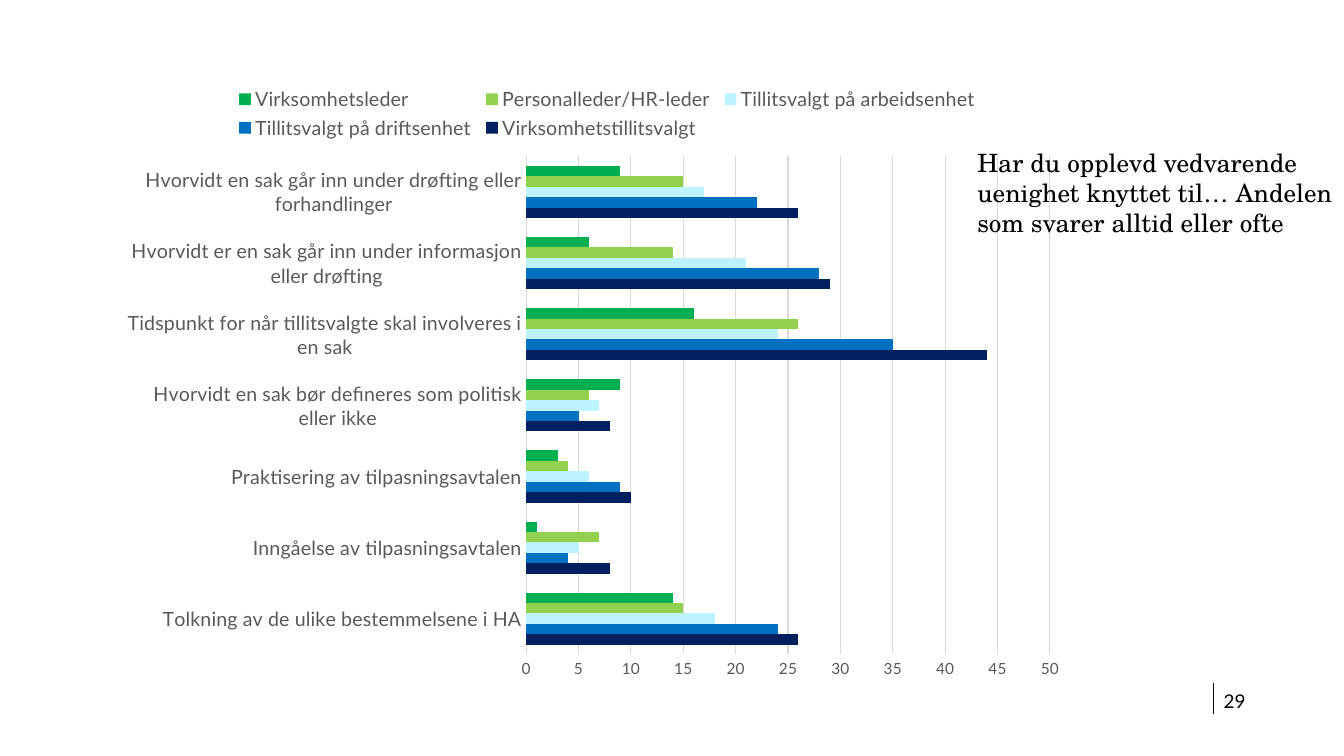
import pptx
import pptx.chart.data
import pptx.dml.color
import pptx.enum.chart
import pptx.enum.shapes
import pptx.enum.text
import pptx.oxml
import pptx.oxml.ns
import pptx.util

Cm = pptx.util.Cm
Pt = pptx.util.Pt

COLORS = {
    "text": "000000",
    "label": "595959",
    "grid": "D9D9D9",
    "navy": "002060",
    "blue": "0070C0",
    "pale": "BDF3FF",
    "lime": "92D050",
    "green": "00B050",
}

TOPICS = [
    "Tolkning av de ulike bestemmelsene i HA",
    "Inngåelse av tilpasningsavtalen",
    "Praktisering av tilpasningsavtalen",
    "Hvorvidt en sak bør defineres som politisk eller ikke",
    "Tidspunkt for når tillitsvalgte skal involveres i en sak",
    "Hvorvidt er en sak går inn under informasjon eller drøfting",
    "Hvorvidt en sak går inn under drøfting eller forhandlinger",
]

ROLES = [
    ("Virksomhetstillitsvalgt", "navy", (26, 8, 10, 8, 44, 29, 26)),
    ("Tillitsvalgt på driftsenhet", "blue", (24, 4, 9, 5, 35, 28, 22)),
    ("Tillitsvalgt på arbeidsenhet", "pale", (18, 5, 6, 7, 24, 21, 17)),
    ("Personalleder/HR-leder", "lime", (15, 7, 4, 6, 26, 14, 15)),
    ("Virksomhetsleder", "green", (14, 1, 3, 9, 16, 6, 9)),
]


def rgb(name):
    return pptx.dml.color.RGBColor.from_string(COLORS[name])


def set_attributes(target, values):
    for name, value in values.items():
        setattr(target, name, value)


def style_font(font, size, color, name="Lato"):
    set_attributes(font, {"size": Pt(size), "name": name})
    font.color.rgb = rgb(color)


def style_line(line, color):
    line.color.rgb = rgb(color)
    line.width = Pt(0.75)


def add_text(slide, box, text, size, font_name, frame_format):
    shape = slide.shapes.add_textbox(*map(Cm, box))
    set_attributes(shape.text_frame, {"word_wrap": True, **frame_format})
    paragraph = shape.text_frame.paragraphs[0]
    run = paragraph.add_run()
    run.text = text
    style_font(run.font, size, "text", font_name)


def add_rule(slide, x, top, bottom):
    connector = slide.shapes.add_connector(
        pptx.enum.shapes.MSO_CONNECTOR.STRAIGHT, Cm(x), Cm(top), Cm(x), Cm(bottom))
    style_line(connector.line, "text")
    properties = connector._element.spPr
    properties.append(properties.makeelement(pptx.oxml.ns.qn("a:effectLst"), {}))


def make_layout(x, y, w, h, inner=False):
    """Fixed placement, as fractions of the chart area."""
    entries = [("layoutTarget", "inner")] if inner else []
    entries += [("xMode", "edge"), ("yMode", "edge"),
                ("x", x), ("y", y), ("w", w), ("h", h)]
    body = "".join(f'<c:{tag} val="{value}"/>' for tag, value in entries)
    return pptx.oxml.parse_xml(
        f'<c:layout {pptx.oxml.ns.nsdecls("c")}>'
        f"<c:manualLayout>{body}</c:manualLayout></c:layout>")


def place(parent, layout, index):
    for old_layout in parent.findall(pptx.oxml.ns.qn("c:layout")):
        parent.remove(old_layout)
    parent.insert(index, layout)


def style_axes(chart):
    none = pptx.enum.chart.XL_TICK_MARK.NONE
    for axis, size in ((chart.category_axis, 14), (chart.value_axis, 11)):
        set_attributes(axis, {"major_tick_mark": none, "minor_tick_mark": none})
        style_font(axis.tick_labels.font, size, "label")
    style_line(chart.category_axis.format.line, "grid")

    value_axis = chart.value_axis
    set_attributes(value_axis, {"minimum_scale": 0, "maximum_scale": 50,
                                "major_unit": 5, "has_major_gridlines": True})
    set_attributes(value_axis.tick_labels,
                   {"number_format": "###0", "number_format_is_linked": False})
    style_line(value_axis.major_gridlines.format.line, "grid")
    value_axis.format.line.fill.background()


def add_bar_chart(slide, box):
    data = pptx.chart.data.CategoryChartData()
    data.categories = TOPICS
    for name, _, values in ROLES:
        data.add_series(name, values)
    chart = slide.shapes.add_chart(
        pptx.enum.chart.XL_CHART_TYPE.BAR_CLUSTERED, *map(Cm, box), data).chart
    set_attributes(chart, {"has_title": False, "has_legend": True})
    style_font(chart.font, 11, "text")

    # Bars
    plot = chart.plots[0]
    set_attributes(plot, {"gap_width": 182, "overlap": 0, "vary_by_categories": False})
    for series, (_, color, _) in zip(plot.series, ROLES):
        series.format.fill.solid()
        series.format.fill.fore_color.rgb = rgb(color)
    style_axes(chart)

    # Legend in two rows above the plot
    set_attributes(chart.legend, {
        "position": pptx.enum.chart.XL_LEGEND_POSITION.TOP,
        "include_in_layout": False,
    })
    style_font(chart.legend.font, 14, "label")
    place(chart.legend._element, make_layout(0.11, 0.01, 0.79, 0.1), 1)
    plot_area = chart._chartSpace.chart.plotArea
    place(plot_area, make_layout(0.42, 0.13, 0.55, 0.81, inner=True), 0)


def main():
    presentation = pptx.Presentation()
    set_attributes(presentation, {"slide_width": Cm(33.87), "slide_height": Cm(19.05)})
    slide = presentation.slides.add_slide(presentation.slide_layouts[6])

    # Page number with its rule
    add_rule(slide, 30.58, 17.2, 17.98)
    margins = dict.fromkeys(
        ("margin_left", "margin_top", "margin_right", "margin_bottom"), 0)
    add_text(slide, (30.84, 17.42, 3.43, 0.48), "29", 13.5, "Lato",
             {"vertical_anchor": pptx.enum.text.MSO_ANCHOR.MIDDLE, **margins})

    # Survey results and the question asked
    add_bar_chart(slide, (3.18, 1.93, 24, 15.49))
    add_text(slide, (24.38, 3.58, 9.86, 2.57),
             "Har du opplevd vedvarende uenighet knyttet til… "
             "Andelen som svarer alltid eller ofte", 18, "TeX Gyre Schola",
             {"auto_size": pptx.enum.text.MSO_AUTO_SIZE.SHAPE_TO_FIT_TEXT})

    presentation.save("out.pptx")


if __name__ == "__main__":
    main()
